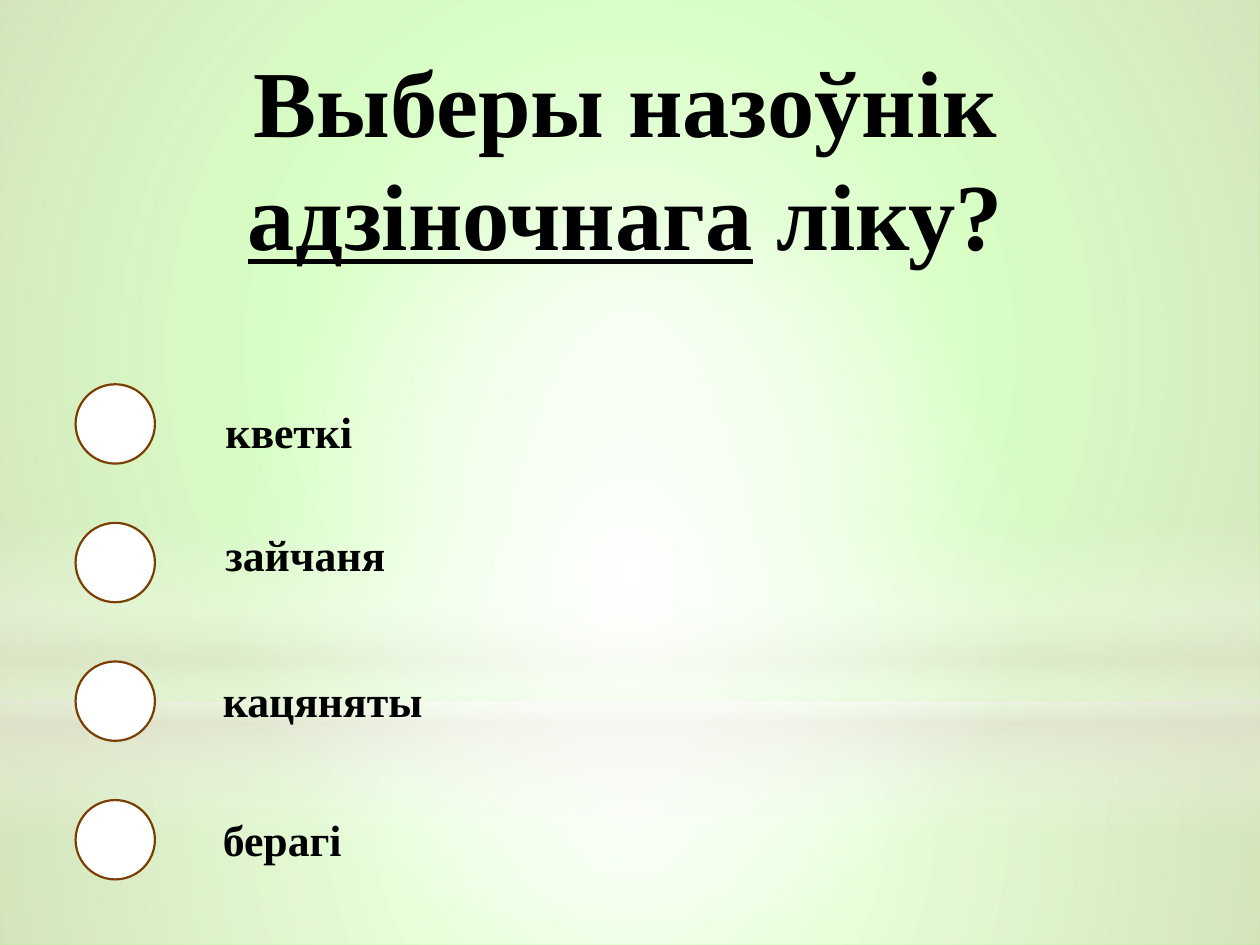
"""Build a quiz slide with one question and four answer circles."""
from pptx import Presentation
from pptx.dml.color import RGBColor
from pptx.enum.shapes import MSO_SHAPE
from pptx.enum.text import MSO_ANCHOR, MSO_AUTO_SIZE, PP_ALIGN
from pptx.oxml import parse_xml
from pptx.oxml.ns import nsdecls, qn
from pptx.util import Inches, Pt

RECT, OVAL = MSO_SHAPE.RECTANGLE, MSO_SHAPE.OVAL
TOP, CENTER, LEFT = MSO_ANCHOR.TOP, PP_ALIGN.CENTER, PP_ALIGN.LEFT
GROW = MSO_AUTO_SIZE.SHAPE_TO_FIT_TEXT

GREEN = RGBColor(0x99, 0xFF, 0x66)
WHITE = RGBColor(0xFF, 0xFF, 0xFF)
SAND = RGBColor(0xE3, 0xDE, 0xD1)
BROWN = RGBColor(0x7A, 0x3E, 0x00)
BLACK = RGBColor(0, 0, 0)
FONT = "Times New Roman"

ROUND = ('<a:path path="circle"><a:fillToRect l="50000" t="50000" '
         'r="50000" b="50000"/></a:path>')
DOWN = '<a:lin ang="5400000" scaled="0"/>'

GLOWS = [
    (RECT, (0, 5.58, 10, 1.92), ROUND,
     [(0, WHITE, 91), (37, WHITE, 76), (100, SAND, 79)]),
    (RECT, (0, 0, 10, 5.58), ROUND,
     [(0, WHITE, 89), (48, WHITE, 62), (100, SAND, 79)]),
    (RECT, (0, 4.12, 10, 2.5), DOWN,
     [(0, WHITE, 0), (29, WHITE, 30), (45, SAND, 40),
      (55, WHITE, 26), (65, SAND, 60), (100, WHITE, 0)]),
    (OVAL, (0, 1.75, 10, 5.58), ROUND, [(0, WHITE, 100), (56, WHITE, 0)]),
]
TITLE = [("Выберы назоўнік ", False), ("адзіночнага", True), (" ліку?", False)]
ANSWERS = [("кветкі", 1.69, 3.16), ("зайчаня", 1.69, 4.14),
           ("кацяняты", 1.67, 5.3), ("берагі", 1.67, 6.4)]
FIRST, STEP, SIZE = 3.05, 1.1, 0.63


def add_shape(slide, kind, box):
    shape = slide.shapes.add_shape(kind, *map(Inches, box))
    shape.shadow.inherit = False
    return shape


def add_glow(slide, kind, box, path, stops):
    shape = add_shape(slide, kind, box)
    shape.line.fill.background()
    shape.fill.background()
    marks = "".join(
        f'<a:gs pos="{pos * 1000}"><a:srgbClr val="{color}">'
        f'<a:alpha val="{alpha * 1000}"/></a:srgbClr></a:gs>'
        for pos, color, alpha in stops)
    grad = parse_xml(f'<a:gradFill {nsdecls("a")} rotWithShape="1">'
                     f'<a:gsLst>{marks}</a:gsLst>{path}</a:gradFill>')
    props = shape._element.spPr
    props.replace(props.find(qn("a:noFill")), grad)


def write(shape, runs, size, align):
    frame = shape.text_frame
    frame.word_wrap = True
    frame.auto_size = GROW
    frame.vertical_anchor = TOP
    para = frame.paragraphs[0]
    para.alignment = align
    font = para.font
    font.name, font.size, font.bold = FONT, Pt(size), True
    font.color.rgb = BLACK
    for text, under in runs:
        run = para.add_run()
        run.text = text
        if under:
            run.font.underline = True


def add_title(slide):
    title = slide.shapes.title
    title.left, title.top = Inches(0.12), Inches(0.29)
    title.width, title.height = Inches(9.69), Inches(1.92)
    write(title, TITLE, 54, CENTER)
    slide.shapes._spTree.append(title._element)


def add_answer(slide, row, text, left, top):
    ring = add_shape(slide, OVAL, (0.6, FIRST + row * STEP, SIZE, SIZE))
    ring.fill.solid()
    ring.fill.fore_color.rgb = WHITE
    ring.line.color.rgb = BROWN
    ring.line.width = Pt(1.25)
    box = slide.shapes.add_textbox(*map(Inches, (left, top, 2.28, 0.52)))
    write(box, [(text, False)], 25, LEFT)


def main():
    deck = Presentation()
    deck.slide_width, deck.slide_height = Inches(10), Inches(7.5)
    slide = deck.slides.add_slide(deck.slide_layouts[5])
    back = slide.background.fill
    back.solid()
    back.fore_color.rgb = GREEN
    for glow in GLOWS:
        add_glow(slide, *glow)
    add_title(slide)
    for row, answer in enumerate(ANSWERS):
        add_answer(slide, row, *answer)
    deck.save("out.pptx")


if __name__ == "__main__":
    main()
